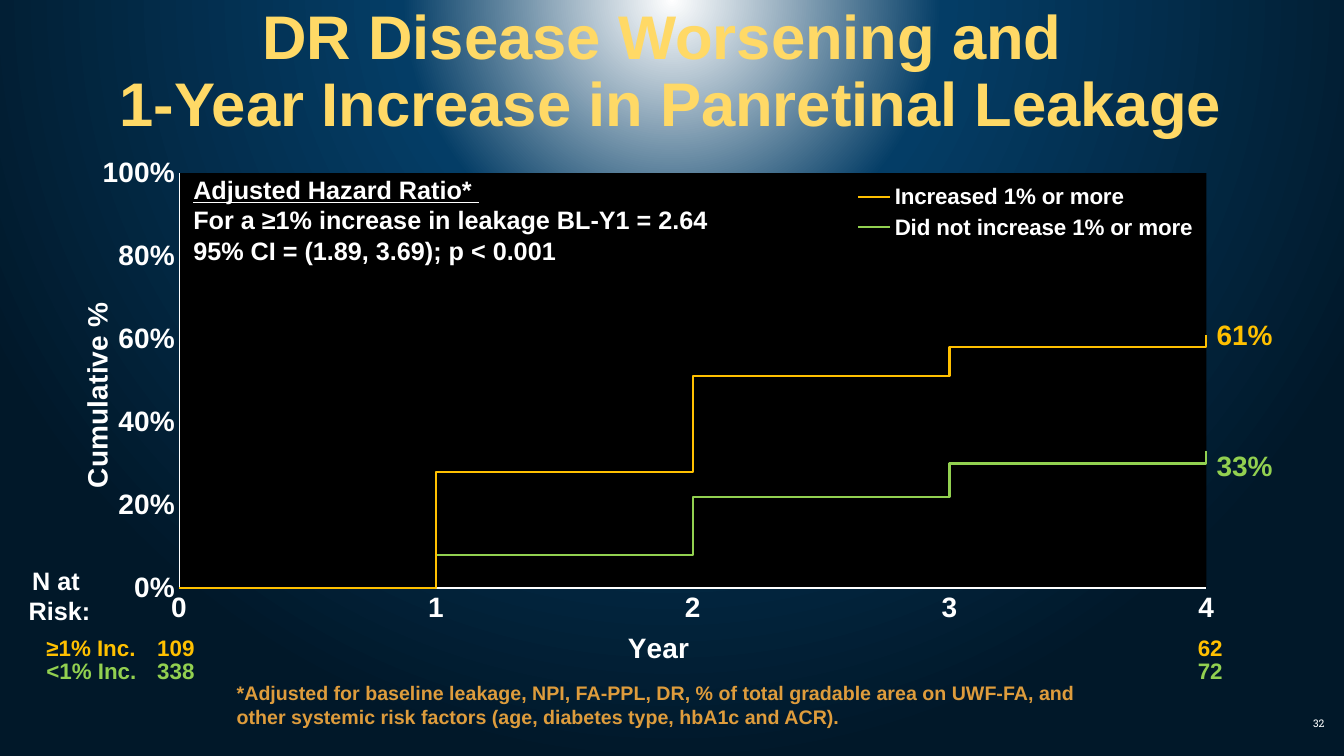
from pptx import Presentation, oxml
from pptx import util as u
from pptx.chart import data
from pptx.dml import color
from pptx.enum import chart as charts, text
from pptx.oxml import ns

WHITE = color.RGBColor(0xFF, 0xFF, 0xFF)
BLACK = color.RGBColor(0x00, 0x00, 0x00)
YELLOW = color.RGBColor(0xFF, 0xD9, 0x66)
ORANGE = color.RGBColor(0xFF, 0xC0, 0x00)
GREEN = color.RGBColor(0x92, 0xD0, 0x50)
BRONZE = color.RGBColor(0xDE, 0x9C, 0x3C)
GRADIENT = [(0, WHITE), (35, color.RGBColor(0x04, 0x3D, 0x66)),
            (100, color.RGBColor(0x01, 0x18, 0x29))]
PLAIN_TABLE = "{2D5ABB26-0587-4C30-8999-92F81FD0307C}"
YEARS = [0, 1, 1, 2, 2, 3, 3, 4, 4]
SERIES = [
    ("Increased 1% or more", ORANGE, [0, 0.28, 0.51, 0.58, 0.61]),
    ("Did not increase 1% or more", GREEN, [0, 0.08, 0.22, 0.3, 0.33]),
]


def points(*lengths):
    """Convert plain numbers to point lengths."""
    return [u.Pt(length) for length in lengths]


def set_font(font, size, colour, name="Arial", bold=True):
    """Format a text or chart font."""
    font.size, font.name, font.bold = u.Pt(size), name, bold
    font.color.rgb = colour


def write_text(frame, lines, size=18, colours=(WHITE,), name="Arial", bold=True,
               align=text.PP_ALIGN.LEFT, spacing=None, underlined=()):
    """Write one paragraph per line, with the last colour used for the rest."""
    for index, line in enumerate(lines):
        paragraph = frame.paragraphs[0] if index == 0 else frame.add_paragraph()
        paragraph.text = line
        paragraph.alignment = align
        paragraph.line_spacing = spacing
        for run in paragraph.runs:
            set_font(run.font, size, colours[min(index, len(colours) - 1)], name, bold)
            run.font.underline = True if index in underlined else None


def add_text(slide, box, lines, wrap=True, anchor=text.MSO_ANCHOR.TOP, **style):
    """Add a text box."""
    frame = slide.shapes.add_textbox(*points(*box)).text_frame
    frame.word_wrap = wrap
    frame.vertical_anchor = anchor
    write_text(frame, lines, **style)


def paint_background(slide):
    """Fill the background with a circular gradient from above the top edge."""
    slide.background.fill.gradient()
    stops = "".join(f'<a:gs pos="{position * 1000}"><a:srgbClr val="{colour}"/></a:gs>'
                    for position, colour in GRADIENT)
    gradient = oxml.parse_xml(
        f'<a:gradFill {ns.nsdecls("a")} rotWithShape="1"><a:gsLst>{stops}</a:gsLst>'
        '<a:path path="circle"><a:fillToRect l="50000" t="-80000" r="50000" b="180000"/>'
        '</a:path></a:gradFill>')
    old = slide.element.xpath("./p:cSld/p:bg//a:gradFill")[0]
    old.getparent().replace(old, gradient)


def add_title(slide, box, title):
    """Move, fill and format the title placeholder."""
    shape = slide.shapes.title
    shape.left, shape.top, shape.width, shape.height = points(*box)
    frame = shape.text_frame
    frame.auto_size = text.MSO_AUTO_SIZE.NONE
    frame.vertical_anchor = text.MSO_ANCHOR.MIDDLE
    write_text(frame, [title], size=44, colours=[YELLOW],
               align=text.PP_ALIGN.CENTER, spacing=0.9)


def place(element, target=None, **fractions):
    """Give a chart part a manual layout in fractions of the chart."""
    for old in element.xpath("./c:layout"):
        element.remove(old)
    inner = f'<c:layoutTarget val="{target}"/>' if target else ""
    modes = '<c:xMode val="edge"/><c:yMode val="edge"/>'
    values = "".join(f'<c:{key} val="{value}"/>' for key, value in fractions.items())
    layout = oxml.parse_xml(f'<c:layout {ns.nsdecls("c")}><c:manualLayout>{inner}{modes}'
                            f'{values}</c:manualLayout></c:layout>')
    overlay = element.find(ns.qn("c:overlay"))
    if overlay is None:
        element.insert(0, layout)
    else:
        overlay.addprevious(layout)


def format_axis(axis, title, maximum, step, number_format, x, y, rotation=0):
    """Set scale, line, labels and title of an axis."""
    axis.minimum_scale, axis.maximum_scale, axis.major_unit = 0, maximum, step
    axis.has_major_gridlines = False
    axis.major_tick_mark = axis.minor_tick_mark = charts.XL_TICK_MARK.NONE
    axis.format.line.color.rgb = WHITE
    axis.format.line.width = u.Pt(0.75)
    axis.tick_labels.number_format = number_format
    axis.tick_labels.number_format_is_linked = False
    set_font(axis.tick_labels.font, 20, WHITE)
    frame = axis.axis_title.text_frame
    write_text(frame, [title], size=20, align=text.PP_ALIGN.CENTER)
    frame._txBody.bodyPr.set("rot", str(rotation * 60000))
    place(axis.axis_title._element, x=x, y=y)


def add_step_chart(slide, box):
    """Add the cumulative step chart."""
    chart_data = data.XyChartData()
    for name, _, levels in SERIES:
        series = chart_data.add_series(name, number_format="0%")
        steps = [levels[0]] + [level for level in levels[:-1] for _ in (0, 1)]
        steps = steps[1:] + [levels[-1]]
        for year, level in zip(YEARS, steps):
            series.add_data_point(year, level)
    chart = slide.shapes.add_chart(charts.XL_CHART_TYPE.XY_SCATTER_LINES_NO_MARKERS,
                                   *points(*box), chart_data).chart
    set_font(chart.font, 20, WHITE)
    chart.has_title = False
    chart.plots[0].vary_by_categories = False
    for series, (_, colour, _) in zip(chart.plots[0].series, SERIES):
        series.smooth = False
        series.format.line.color.rgb = colour
        series.format.line.width = u.Pt(1.5)
        series.marker.style = charts.XL_MARKER_STYLE.NONE
    format_axis(chart.category_axis, "Year", 4, 1, "General", 0.48, 0.9)
    format_axis(chart.value_axis, "Cumulative %", 1, 0.2, "0%", 0.01, 0.27, rotation=-90)
    chart.has_legend = True
    chart.legend.position = charts.XL_LEGEND_POSITION.TOP
    chart.legend.include_in_layout = True
    set_font(chart.legend.font, 16, WHITE)
    place(chart.legend._element, x=0.67, y=0.04, w=0.31, h=0.13)
    plot_area = chart._chartSpace.xpath("./c:chart/c:plotArea")[0]
    place(plot_area, target="inner", x=0.1, y=0.03, w=0.88, h=0.8)
    plot_area.append(oxml.parse_xml(
        f'<c:spPr {ns.nsdecls("c", "a")}><a:solidFill><a:srgbClr val="{BLACK}"/>'
        '</a:solidFill></c:spPr>'))


def add_plain_table(slide, left, top, widths, heights):
    """Add a table without fills, bands or borders."""
    box = points(left, top, sum(widths), sum(heights))
    frame = slide.shapes.add_table(len(heights), len(widths), *box)
    table = frame.table
    table.first_row = table.horz_banding = False
    frame._element.xpath(".//a:tableStyleId")[0].text = PLAIN_TABLE
    for column, width in zip(table.columns, widths):
        column.width = u.Pt(width)
    for row, height in zip(table.rows, heights):
        row.height = u.Pt(height)
    for cell in table.iter_cells():
        cell.fill.background()
    return table


def main():
    """Build the slide and save it."""
    presentation = Presentation()
    presentation.slide_width, presentation.slide_height = points(960, 540)
    slide = presentation.slides.add_slide(presentation.slide_layouts[5])
    paint_background(slide)
    add_title(slide, (72, 0, 815, 104.4),
              "DR Disease Worsening and \v1-Year Increase in Panretinal Leakage")
    add_text(slide, (894.2, 502.5, 59, 28.8), ["32"], size=7.5, name="Roboto Slab",
             bold=False, align=text.PP_ALIGN.RIGHT, anchor=text.MSO_ANCHOR.MIDDLE)
    add_step_chart(slide, (44.6, 112.3, 833.8, 370.8))

    risk_table = add_plain_table(slide, 25.9, 451.4,
                                 [79.2, 162, 170.6, 78.5, 169.2, 195.1], [45.4])
    for column, lines, align in [(0, ["≥1% Inc.", "<1% Inc."], text.PP_ALIGN.LEFT),
                                 (1, ["109", "338"], text.PP_ALIGN.LEFT),
                                 (5, ["62", "72"], text.PP_ALIGN.RIGHT)]:
        write_text(risk_table.cell(0, column).text_frame, lines, size=16,
                   colours=[ORANGE, GREEN], align=align, spacing=u.Pt(17))
    add_text(slide, (13, 400.3, 59, 51), ["N at ", "Risk:"], wrap=False,
             align=text.PP_ALIGN.CENTER)

    final_table = add_plain_table(slide, 861.8, 225.4, [59.8], [92.9, 56.9])
    for row, (_, colour, levels) in enumerate(SERIES):
        write_text(final_table.cell(row, 0).text_frame, [f"{levels[-1]:.0%}"],
                   size=20, colours=[colour])

    add_text(slide, (131, 121, 517, 94.3),
             ["Adjusted Hazard Ratio* ", "For a ≥1% increase in leakage BL-Y1 = 2.64",
              "95% CI = (1.89, 3.69); p < 0.001"], underlined=[0])
    add_text(slide, (162, 483.1, 635, 41),
             ["*Adjusted for baseline leakage, NPI, FA-PPL, DR, % of total gradable area on "
              "UWF-FA, and other systemic risk factors (age, diabetes type, hbA1c and ACR)."],
             size=14, colours=[BRONZE])
    presentation.save("out.pptx")


if __name__ == "__main__":
    main()
